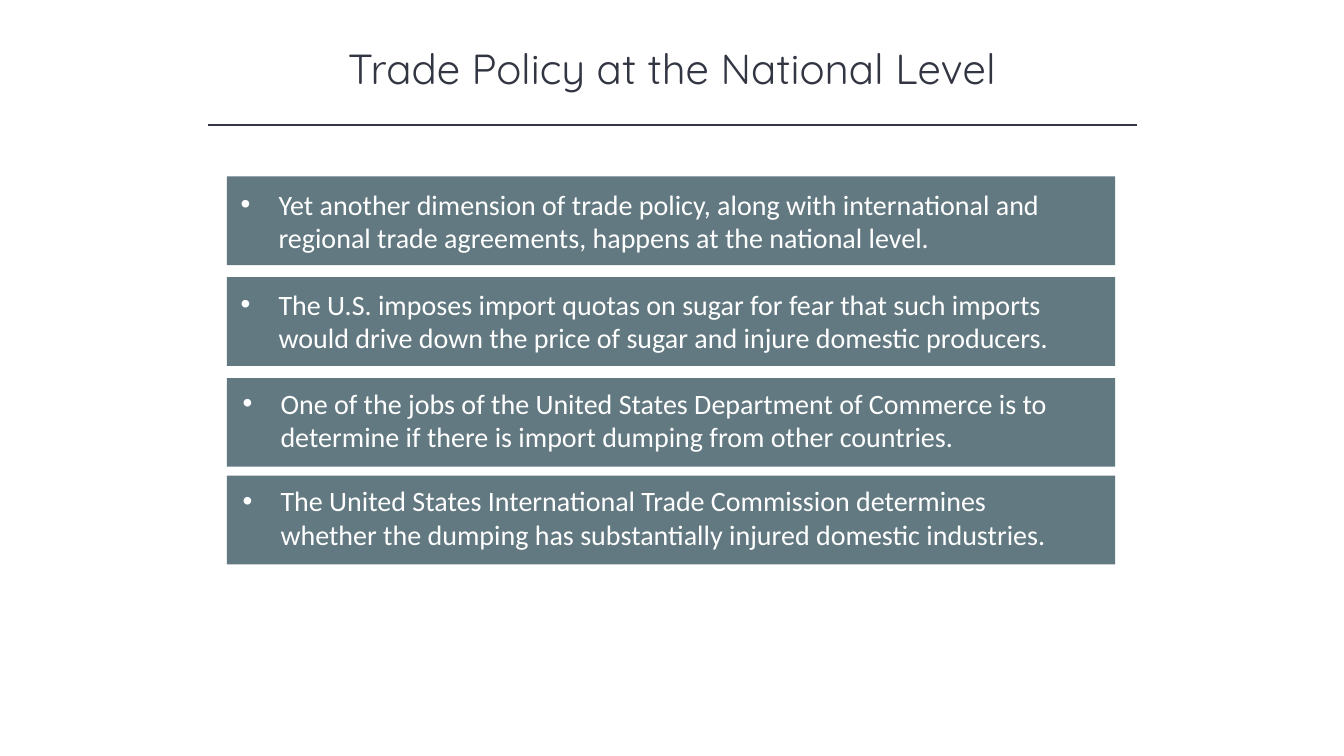
from dataclasses import dataclass

from lxml import etree
from pptx import Presentation
from pptx.dml.color import RGBColor
from pptx.enum.shapes import MSO_CONNECTOR as Connector, MSO_SHAPE as Shape
from pptx.enum.text import MSO_ANCHOR as Anchor, MSO_AUTO_SIZE as AutoSize, PP_ALIGN as Align
from pptx.oxml.ns import qn
from pptx.util import Pt

# Content: each band has its top, the offset of its text, and the text
TITLE = "Trade Policy at the National Level"
BANDS = [
    (126, (2.9, 4.3), "Yet another dimension of trade policy, along with international and "
                      "regional trade agreements, happens at the national level."),
    (198, (2.9, 3.6), "The U.S. imposes import quotas on sugar for fear that such imports "
                      "would drive down the price of sugar and injure domestic producers."),
    (270, (4.3, 2.2), "One of the jobs of the United States Department of Commerce is to "
                      "determine if there is import dumping from other countries."),
    (339.8, (4.3, 2.2), "The United States International Trade Commission determines "
                        "whether the dumping has substantially injured domestic industries."),
]


@dataclass(frozen=True)
class Theme:
    ink: RGBColor = RGBColor(0x32, 0x35, 0x42)
    band: RGBColor = RGBColor(0x62, 0x79, 0x81)
    light: RGBColor = RGBColor(0xFF, 0xFF, 0xFF)
    title_font: str = "Quicksand"
    body_font: str = "Calibri"
    title_size: int = 30
    body_size: int = 20


THEME = Theme()

# Layout, in points
SLIDE_W, SLIDE_H = 960, 540
TITLE_BOX = (120, 26.6, 720, 43.9)
RULE_LEFT, RULE_RIGHT, RULE_Y = 148.3, 812.2, 89.3
BAND_LEFT, BAND_W, BAND_H = 162, 634.5, 63.4
TEXT_W, TEXT_H = 615, 55.4
BULLET_INDENT = 27


def write(p, text, font, size, color):
    r = p.add_run()
    r.text = text
    r.font.name, r.font.size = font, Pt(size)
    r.font.color.rgb = color


def add_bullet(p):
    pPr = p._p.get_or_add_pPr()
    pPr.set("marL", str(Pt(BULLET_INDENT)))
    pPr.set("indent", str(-Pt(BULLET_INDENT)))
    etree.SubElement(pPr, qn("a:buFont")).set("typeface", "Arial")
    etree.SubElement(pPr, qn("a:buChar")).set("char", "•")


def add_panel(group, left, top, width, height):
    sp = group.shapes.add_shape(Shape.RECTANGLE, Pt(left), Pt(top), Pt(width), Pt(height))
    sp.shadow.inherit = False
    sp.fill.solid()
    sp.fill.fore_color.rgb = THEME.band
    sp.line.fill.background()
    return sp


def add_title(s):
    tf = s.shapes.add_textbox(*map(Pt, TITLE_BOX)).text_frame
    tf.word_wrap = True
    tf.auto_size = AutoSize.SHAPE_TO_FIT_TEXT
    p = tf.paragraphs[0]
    p.alignment = Align.CENTER
    write(p, TITLE, THEME.title_font, THEME.title_size, THEME.ink)


def add_rule(s):
    rule = s.shapes.add_connector(Connector.STRAIGHT, Pt(RULE_LEFT), Pt(RULE_Y),
                                  Pt(RULE_RIGHT), Pt(RULE_Y))
    rule.line.color.rgb = THEME.ink
    rule.line.width = Pt(1)
    etree.SubElement(rule._element.spPr, qn("a:effectLst"))


def add_band(s, top, offset, text):
    group = s.shapes.add_group_shape()
    add_panel(group, BAND_LEFT, top, BAND_W, BAND_H)
    dx, dy = offset
    tf = add_panel(group, BAND_LEFT + dx, top + dy, TEXT_W, TEXT_H).text_frame
    tf.word_wrap = True
    tf.auto_size = AutoSize.SHAPE_TO_FIT_TEXT
    tf.vertical_anchor = Anchor.TOP
    p = tf.paragraphs[0]
    p.alignment = Align.LEFT
    add_bullet(p)
    write(p, text, THEME.body_font, THEME.body_size, THEME.light)


def main():
    prs = Presentation()
    prs.slide_width, prs.slide_height = Pt(SLIDE_W), Pt(SLIDE_H)
    s = prs.slides.add_slide(prs.slide_layouts[6])

    # Heading
    add_title(s)
    add_rule(s)

    # Statement bands
    for top, offset, text in BANDS:
        add_band(s, top, offset, text)

    prs.save("out.pptx")


if __name__ == "__main__":
    main()
